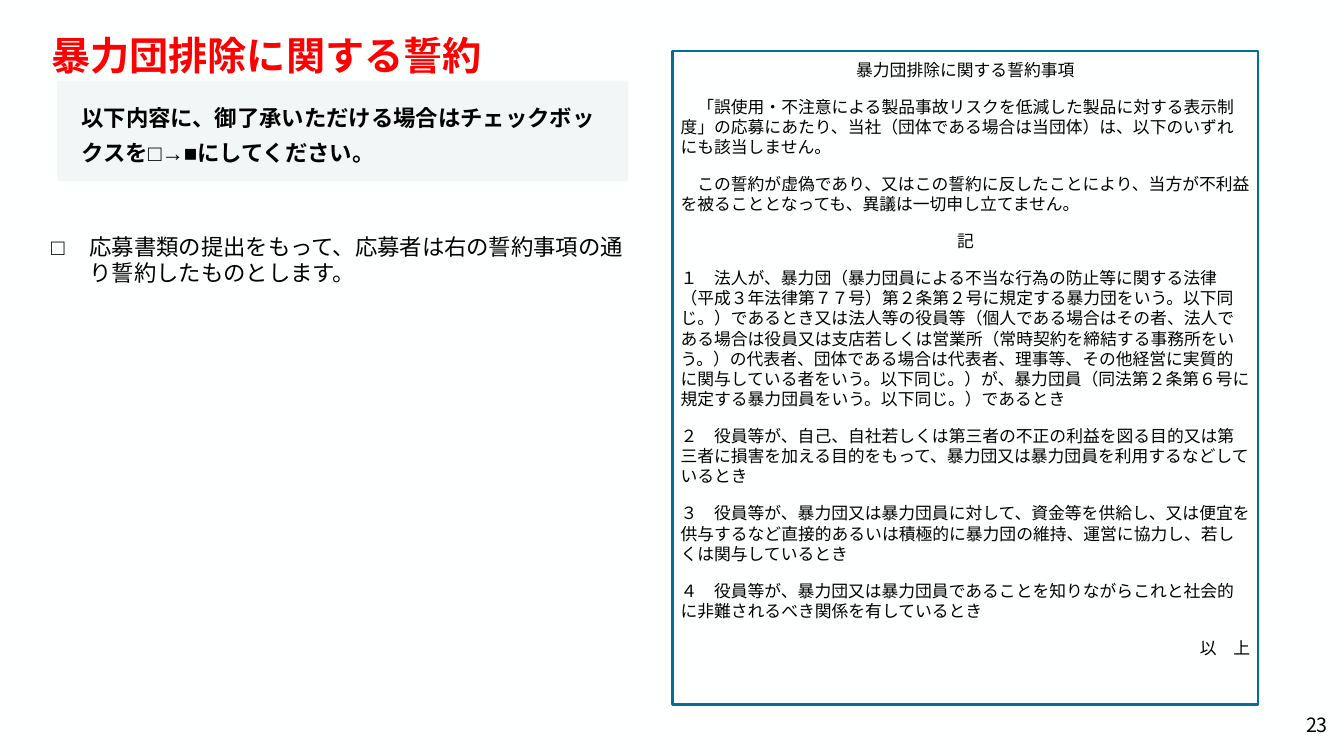
"""Build the pledge slide on excluding organized crime groups."""
from lxml import etree
from pptx import Presentation
from pptx.dml.color import RGBColor
from pptx.enum.shapes import MSO_SHAPE
from pptx.enum.text import MSO_ANCHOR, PP_ALIGN
from pptx.oxml.ns import qn
from pptx.util import Inches, Pt

RECTANGLE = MSO_SHAPE.RECTANGLE
TOP, MIDDLE = MSO_ANCHOR.TOP, MSO_ANCHOR.MIDDLE
LEFT, CENTER, RIGHT = PP_ALIGN.LEFT, PP_ALIGN.CENTER, PP_ALIGN.RIGHT
BLACK, RED, TEAL, PALE, PAPER = "000000", "FF0000", "016F96", "F3F6F6", "FEFFFF"


def color(value):
    """Turn a hex string into a colour."""
    return RGBColor.from_string(value)


def write(box, lines, size, tint=BLACK, bold=False, face="Arial", anchor=TOP,
          wrap=True, insets=(0.1, 0.05, 0.1, 0.05), spacing=None, gap=0):
    """Fill a box with (alignment, text) paragraphs."""
    frame = box.text_frame
    left, top, right, bottom = map(Inches, insets)
    layout = {"word_wrap": wrap, "vertical_anchor": anchor, "margin_left": left,
              "margin_top": top, "margin_right": right, "margin_bottom": bottom}
    for name, value in layout.items():
        setattr(frame, name, value)
    for index, (alignment, text) in enumerate(lines):
        para = frame.paragraphs[0] if index == 0 else frame.add_paragraph()
        para_format = {"alignment": alignment, "line_spacing": spacing,
                       "space_before": Pt(gap if index else 0), "space_after": Pt(gap)}
        for name, value in para_format.items():
            setattr(para, name, value)
        span = para.add_run()
        span.text = text
        for name, value in {"size": Pt(size), "bold": bold, "name": face}.items():
            setattr(span.font, name, value)
        span.font.color.rgb = color(tint)
        properties = span.font._element
        properties.set("lang", "ja-JP")
        etree.SubElement(properties, qn("a:ea")).set("typeface", face)


deck = Presentation()
deck.slide_width, deck.slide_height = Inches(13.33), Inches(7.5)
page = deck.slides.add_slide(deck.slide_layouts[6])
page.background.fill.solid()
page.background.fill.fore_color.rgb = color(PAPER)

pledge_lines = [
    (CENTER, "暴力団排除に関する誓約事項"),
    (LEFT, "　「誤使用・不注意による製品事故リスクを低減した製品に対する表示制度」の応募にあたり、"
           "当社（団体である場合は当団体）は、以下のいずれにも該当しません。"),
    (LEFT, "　この誓約が虚偽であり、又はこの誓約に反したことにより、当方が不利益を被ることとなっても、"
           "異議は一切申し立てません。"),
    (CENTER, "記"),
    (LEFT, "１　法人が、暴力団（暴力団員による不当な行為の防止等に関する法律（平成３年法律第７７号）"
           "第２条第２号に規定する暴力団をいう。以下同じ。）であるとき又は法人等の役員等"
           "（個人である場合はその者、法人である場合は役員又は支店若しくは営業所"
           "（常時契約を締結する事務所をいう。）の代表者、団体である場合は代表者、理事等、"
           "その他経営に実質的に関与している者をいう。以下同じ。）が、暴力団員"
           "（同法第２条第６号に規定する暴力団員をいう。以下同じ。）であるとき"),
    (LEFT, "２　役員等が、自己、自社若しくは第三者の不正の利益を図る目的又は第三者に損害を加える目的をもって、"
           "暴力団又は暴力団員を利用するなどしているとき"),
    (LEFT, "３　役員等が、暴力団又は暴力団員に対して、資金等を供給し、又は便宜を供与するなど"
           "直接的あるいは積極的に暴力団の維持、運営に協力し、若しくは関与しているとき"),
    (LEFT, "４　役員等が、暴力団又は暴力団員であることを知りながらこれと社会的に非難されるべき関係を有しているとき"),
    (RIGHT, "以　上"),
]
pledge = page.shapes.add_shape(RECTANGLE, Inches(6.67), Inches(0.51), Inches(5.81), Inches(6.48))
pledge.shadow.inherit = False
pledge.fill.background()
pledge.line.color.rgb = color(TEAL)
pledge.line.width = Pt(1.5)
write(pledge, pledge_lines, 12, insets=(0.08, 0.08, 0.08, 0.04), gap=6)

notice = page.shapes.add_shape(RECTANGLE, Inches(0.57), Inches(0.8), Inches(5.66), Inches(1))
notice.shadow.inherit = False
notice.fill.solid()
notice.fill.fore_color.rgb = color(PALE)
notice.line.fill.background()
write(notice, [(LEFT, "以下内容に、御了承いただける場合はチェックボックスを□→■にしてください。")], 16,
      bold=True, anchor=MIDDLE, insets=(0.24, 0.16, 0.24, 0.16), spacing=1.3, gap=6)

labels = [
    ((0.41, 0.26, 4.52, 0.57), LEFT, "暴力団排除に関する誓約",
     {"size": 28, "tint": RED, "bold": True, "wrap": False}),
    ((0.79, 2.26, 5.66, 0.64), LEFT,
     "応募書類の提出をもって、応募者は右の誓約事項の通り誓約したものとします。", {"size": 16}),
    ((0.41, 2.26, 0.4, 0.37), LEFT, "□", {"size": 16}),
    ((12.76, 7.04, 0.57, 0.46), RIGHT, "23",
     {"size": 14, "face": "Noto Sans CJK JP", "anchor": MIDDLE, "wrap": False,
      "insets": (0, 0, 0.16, 0.16)}),
]
for place, alignment, text, style in labels:
    label = page.shapes.add_textbox(*map(Inches, place))
    write(label, [(alignment, text)], **style)

deck.save("out.pptx")
